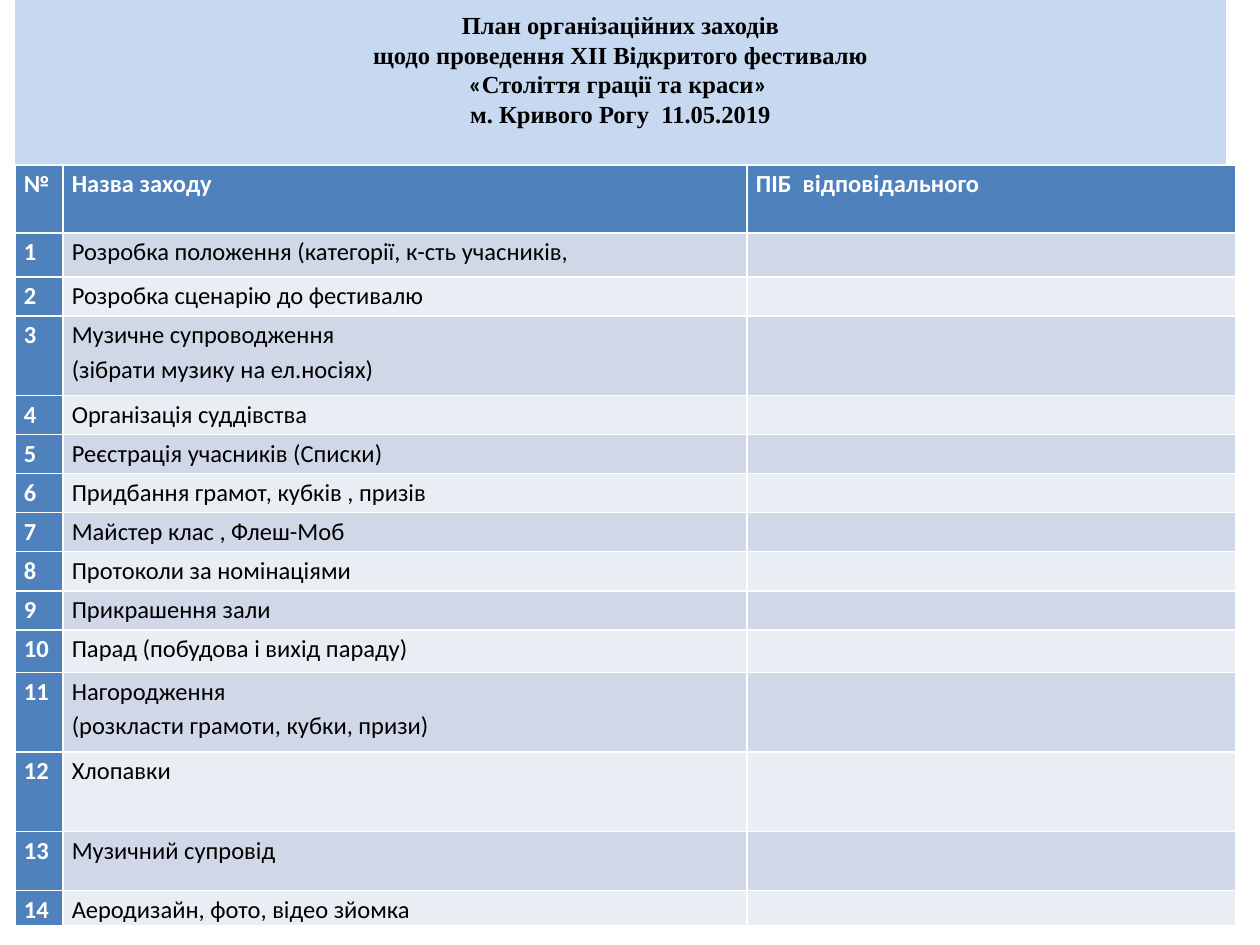
from dataclasses import dataclass
from typing import Any

from pptx import Presentation
from pptx.dml.color import RGBColor
from pptx.enum.text import MSO_ANCHOR, MSO_AUTO_SIZE, PP_ALIGN
from pptx.util import Inches, Pt

COLUMNS, ROWS = 100, 75
HEADINGS = ["№", "Назва заходу", "ПІБ  відповідального"]
COLUMN_WIDTHS = [3.8, 54.3, 38.8]
HEADER_HEIGHT = 5.4
ACTIVITIES = [
    (["Розробка положення (категорії, к-сть учасників,"], 3.5),
    (["Розробка сценарію до фестивалю"], 3.1),
    (["Музичне супроводження", "(зібрати музику на ел.носіях)"], 6.3),
    (["Організація суддівства"], 3.1),
    (["Реєстрація учасників (Списки)"], 3.1),
    (["Придбання грамот, кубків , призів"], 3.1),
    (["Майстер клас , Флеш-Моб"], 3.1),
    (["Протоколи за номінаціями"], 3.1),
    (["Прикрашення зали"], 3.1),
    (["Парад (побудова і вихід параду)"], 3.4),
    (["Нагородження", "(розкласти грамоти, кубки, призи)"], 6.3),
    (["Хлопавки"], 6.3),
    (["Музичний супровід"], 4.7),
    (["Аеродизайн, фото, відео зйомка"], 2.8),
]
SERIF, SANS = "Times New Roman", "Calibri"
FESTIVAL_LINES = [
    [("План організаційних заходів", SERIF)],
    [("щодо проведення ХІІ Відкритого фестивалю", SERIF)],
    [("«", SANS), ("Століття грації та краси", SERIF), ("» ", SANS)],
    [("м. Кривого Рогу  11.05.2019", SERIF)],
]


def paint(color):
    """Turn a hex string into a colour."""
    return RGBColor.from_string(color)


def write(paragraph, text, *, font=SANS, size=14, color="000000", bold=False,
          align=PP_ALIGN.JUSTIFY, spacing=1.15):
    """Add formatted text to a paragraph."""
    paragraph.alignment = align
    paragraph.line_spacing = spacing
    paragraph.font.size = Pt(size)
    run = paragraph.add_run()
    run.text = text
    run.font.name = font
    run.font.size = Pt(size)
    run.font.bold = bold
    run.font.color.rgb = paint(color)


def paragraphs_for(frame, count):
    """Return the given number of paragraphs of a text frame."""
    return [frame.paragraphs[0]] + [frame.add_paragraph() for _ in range(count - 1)]


@dataclass
class PlanSlide:
    """Hold the style and the current slide."""

    deck: Any
    slide: Any
    accent: str = "4F81BD"
    bands: tuple = ("D0D8E8", "E9EDF4")
    heading_fill: str = "C6D9F1"

    def across(self, columns):
        """Convert grid columns to a length."""
        return round(self.deck.slide_width * columns / COLUMNS)

    def down(self, rows):
        """Convert grid rows to a length."""
        return round(self.deck.slide_height * rows / ROWS)

    def heading(self, lines, left, top, width, height):
        """Fill and place the title placeholder."""
        title = self.slide.shapes.title
        title.left, title.top = self.across(left), self.down(top)
        title.width, title.height = self.across(width), self.down(height)
        title.fill.solid()
        title.fill.fore_color.rgb = paint(self.heading_fill)
        frame = title.text_frame
        frame.auto_size = MSO_AUTO_SIZE.NONE
        frame.vertical_anchor = MSO_ANCHOR.TOP
        frame.margin_top = self.down(0.8)
        for paragraph, pieces in zip(paragraphs_for(frame, len(lines)), lines):
            for text, font in pieces:
                write(paragraph, text, font=font, bold=True,
                      align=PP_ALIGN.CENTER, spacing=Pt(16.9))

    def cell(self, cell, lines, fill, **style):
        """Fill one table cell with text lines."""
        cell.fill.solid()
        cell.fill.fore_color.rgb = paint(fill)
        cell.margin_left = cell.margin_right = self.across(0.7)
        cell.margin_top = cell.margin_bottom = 0
        for paragraph, text in zip(paragraphs_for(cell.text_frame, len(lines)), lines):
            if text:
                write(paragraph, text, **style)
            else:
                paragraph.font.size = Pt(14)

    def activities(self, left, top):
        """Draw the numbered table of activities."""
        heights = [HEADER_HEIGHT] + [height for _, height in ACTIVITIES]
        table = self.slide.shapes.add_table(
            len(heights), len(HEADINGS), self.across(left), self.down(top),
            self.across(sum(COLUMN_WIDTHS)), self.down(sum(heights))).table
        table.first_col = True
        for column, width in zip(table.columns, COLUMN_WIDTHS):
            column.width = self.across(width)
        for row, height in zip(table.rows, heights):
            row.height = self.down(height)
        strong = {"color": "FFFFFF", "bold": True}
        for column, text in enumerate(HEADINGS):
            self.cell(table.cell(0, column), [text], self.accent, **strong)
        for number, (lines, _) in enumerate(ACTIVITIES, 1):
            band = self.bands[(number - 1) % 2]
            self.cell(table.cell(number, 0), [str(number)], self.accent, **strong)
            self.cell(table.cell(number, 1), lines, band)
            self.cell(table.cell(number, 2), [""], band)


def main():
    """Build and save the festival plan."""
    deck = Presentation()
    deck.slide_width, deck.slide_height = Inches(10), Inches(7.5)
    plan = PlanSlide(deck, deck.slides.add_slide(deck.slide_layouts[5]))
    plan.heading(FESTIVAL_LINES, 1.2, 0, 96.1, 15.5)
    plan.activities(1.2, 13.1)
    deck.save("out.pptx")


if __name__ == "__main__":
    main()
